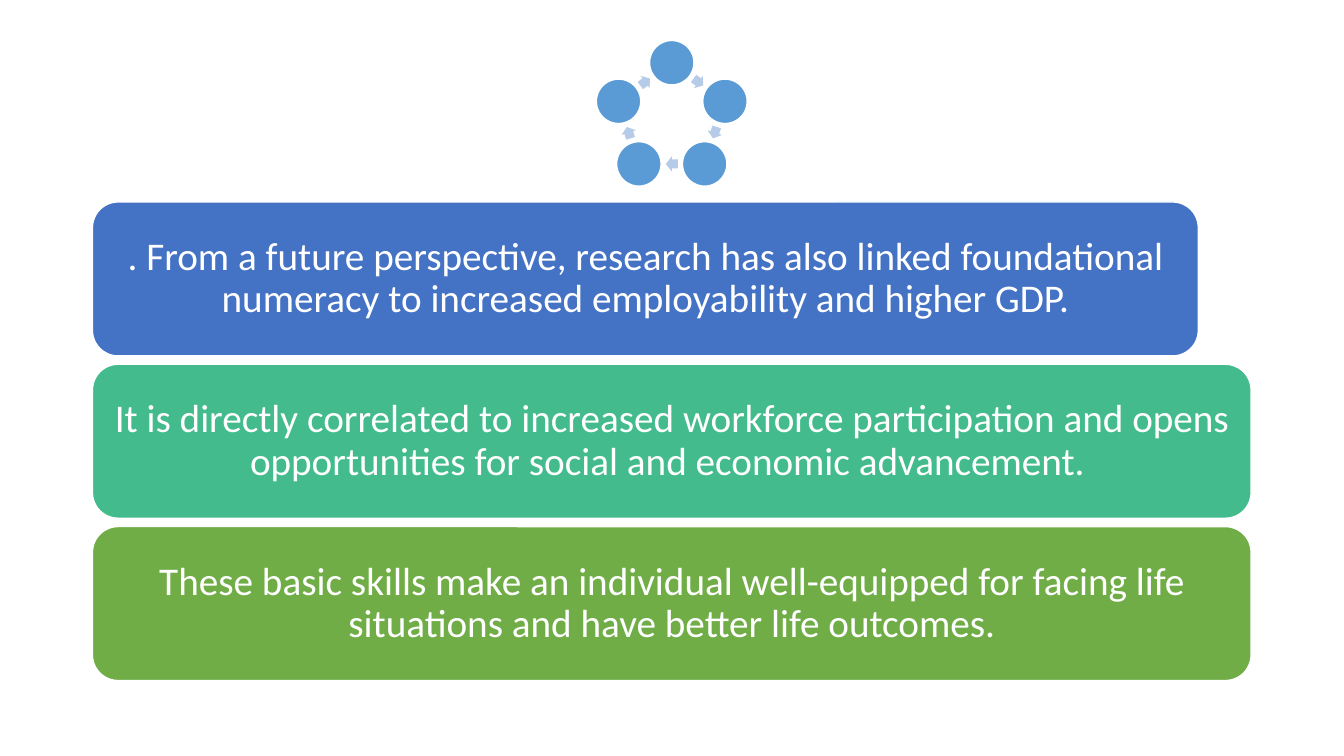
from math import cos, pi, sin

from pptx import Presentation
from pptx.dml.color import RGBColor
from pptx.enum.shapes import MSO_SHAPE as Shape
from pptx.enum.text import MSO_ANCHOR as Anchor, PP_ALIGN as Align
from pptx.util import Cm, Pt

# Content: text, fill and width in cm of each bar
BARS = [
    (". From a future perspective, research has also linked foundational "
     "numeracy to increased employability and higher GDP.", "4472C4", 27.87),
    ("It is directly correlated to increased workforce participation and opens "
     "opportunities for social and economic advancement. ", "43BB8D", 29.2),
    ("These basic skills make an individual well-equipped for facing life "
     "situations and have better life outcomes.", "70AD47", 29.2),
]
FONT, TEXT_SIZE = "Calibri", 28
WHITE, CIRCLE_BLUE, ARROW_BLUE = "FFFFFF", "5B9BD5", "B5CBE7"

# Layout in cm
BAR_LEFT, BAR_TOP, BAR_HEIGHT, BAR_PITCH = 2.33, 5.09, 3.88, 4.09
RING_X, RING_Y, RING_RADIUS = 16.93, 2.99, 1.41
CIRCLE_COUNT, CIRCLE_SIZE = 5, 1.12
ARROW_WIDTH, ARROW_HEIGHT = 0.3, 0.38


def color(hex_string):
    return RGBColor.from_string(hex_string)


def add_filled(shapes, kind, left, top, width, height, fill, line=None):
    shape = shapes.add_shape(kind, Cm(left), Cm(top), Cm(width), Cm(height))
    shape.shadow.inherit = False
    shape.fill.solid()
    shape.fill.fore_color.rgb = color(fill)
    if line:
        shape.line.color.rgb = color(line)
        shape.line.width = Pt(1)
    else:
        shape.line.fill.background()
    return shape


def add_on_ring(shapes, kind, angle, radius, width, height, fill, line=None):
    """Centre a shape on the ring, at a clockwise angle from the top."""
    left = RING_X + radius * sin(angle) - width / 2
    top = RING_Y - radius * cos(angle) - height / 2
    return add_filled(shapes, kind, left, top, width, height, fill, line)


def add_ring(slide):
    shapes = slide.shapes.add_group_shape().shapes
    step = 2 * pi / CIRCLE_COUNT
    chord_radius = RING_RADIUS * cos(step / 2)
    for index in range(CIRCLE_COUNT):
        add_on_ring(shapes, Shape.OVAL, index * step, RING_RADIUS,
                    CIRCLE_SIZE, CIRCLE_SIZE, CIRCLE_BLUE, WHITE)
        # The arrow sits halfway along the chord to the next circle
        arrow = add_on_ring(shapes, Shape.RIGHT_ARROW, (index + 0.5) * step,
                            chord_radius, ARROW_WIDTH, ARROW_HEIGHT, ARROW_BLUE)
        arrow.adjustments[0] = 0.6
        arrow.rotation = (index + 0.5) * 360 / CIRCLE_COUNT


def add_bar(shapes, top, text, fill, width):
    bar = add_filled(shapes, Shape.ROUNDED_RECTANGLE, BAR_LEFT, top,
                     width, BAR_HEIGHT, fill, WHITE)
    frame = bar.text_frame
    frame.word_wrap = True
    frame.vertical_anchor = Anchor.MIDDLE
    frame.margin_left = frame.margin_right = Cm(0.3)
    frame.margin_top = frame.margin_bottom = Cm(0.15)
    frame.text = text
    paragraph = frame.paragraphs[0]
    paragraph.alignment = Align.CENTER
    paragraph.line_spacing = 0.9
    font = paragraph.runs[0].font
    font.name, font.size = FONT, Pt(TEXT_SIZE)
    font.color.rgb = color(WHITE)


def main():
    presentation = Presentation()
    presentation.slide_width, presentation.slide_height = Cm(33.87), Cm(19.05)
    slide = presentation.slides.add_slide(presentation.slide_layouts[6])

    # Ring of circles above the bars
    add_ring(slide)

    # Stacked text bars
    bar_shapes = slide.shapes.add_group_shape().shapes
    for row, (text, fill, width) in enumerate(BARS):
        add_bar(bar_shapes, BAR_TOP + row * BAR_PITCH, text, fill, width)

    presentation.save("out.pptx")


if __name__ == "__main__":
    main()
